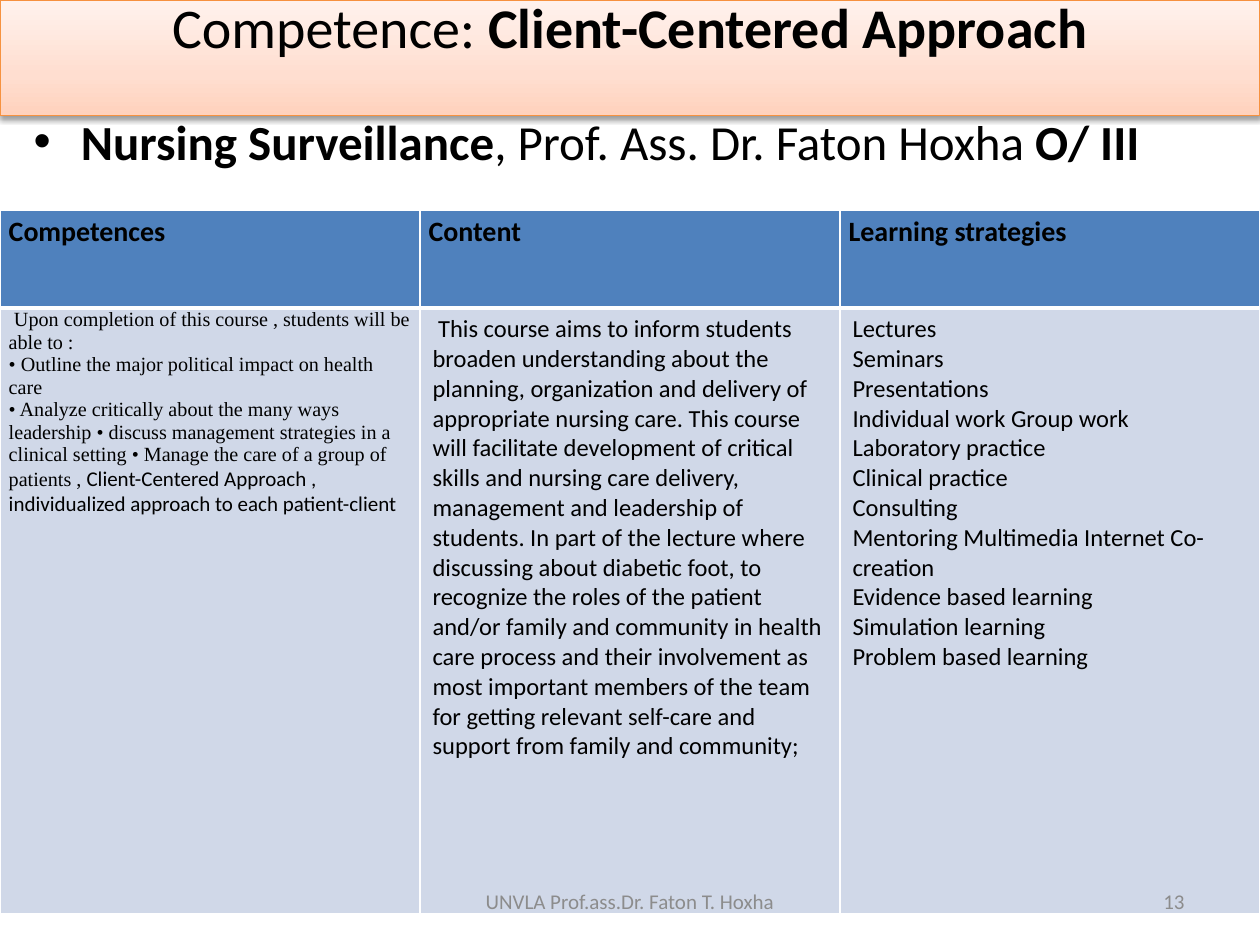
from dataclasses import dataclass

from lxml import etree
from pptx import Presentation
from pptx.dml.color import RGBColor
from pptx.enum.text import MSO_ANCHOR, MSO_AUTO_SIZE, PP_ALIGN
from pptx.oxml import parse_xml
from pptx.oxml.ns import nsdecls, qn
from pptx.util import Pt

LEFT, CENTER, RIGHT = PP_ALIGN.LEFT, PP_ALIGN.CENTER, PP_ALIGN.RIGHT
TOP, MIDDLE = MSO_ANCHOR.TOP, MSO_ANCHOR.MIDDLE
NO_AUTOFIT = MSO_AUTO_SIZE.NONE


@dataclass(frozen=True)
class Theme:
    sans: str = "Calibri"
    serif: str = "Times New Roman"
    ink: str = "000000"
    muted: str = "8C8C8C"
    header: str = "4F81BD"
    cell: str = "D0D8E8"
    grid: str = "FFFFFF"
    title_line: str = "F69240"
    title_stops: tuple = ((0, "FFD2BD"), (35, "FFDED0"), (100, "FFF2ED"))
    title_size: float = 32
    body_size: float = 28
    header_size: float = 16
    cell_size: float = 14
    note_size: float = 12
    serif_size: float = 11.5


THEME = Theme()


@dataclass(frozen=True)
class Span:
    text: str
    size: float
    bold: bool = False
    font: str = THEME.sans
    color: str = THEME.ink


@dataclass(frozen=True)
class Box:
    left: float
    top: float
    width: float
    height: float


@dataclass(frozen=True)
class CellStyle:
    fill: str
    bottom_line: float
    margins: tuple = (7.2, 3.6, 7.2, 3.6)
    line_spacing: float = 1.0


def write(frame, paragraphs: list, align=None, line_spacing=None) -> None:
    """Fill a text frame with paragraphs, each a list of spans."""
    for index, spans in enumerate(paragraphs):
        para = frame.paragraphs[0] if index == 0 else frame.add_paragraph()
        if align is not None:
            para.alignment = align
        if line_spacing is not None:
            para.line_spacing = line_spacing
        for span in spans:
            run = para.add_run()
            run.text = span.text
            run.font.size = Pt(span.size)
            run.font.bold = span.bold
            run.font.name = span.font
            run.font.color.rgb = RGBColor.from_string(span.color)


def place(shape, box: Box) -> None:
    shape.left, shape.top = Pt(box.left), Pt(box.top)
    shape.width, shape.height = Pt(box.width), Pt(box.height)


def style_banner(shape) -> None:
    """Give the title its outline, upward gradient and soft shadow."""
    shape.line.color.rgb = RGBColor.from_string(THEME.title_line)
    shape.line.width = Pt(0.75)
    stops = "".join(
        f'<a:gs pos="{position * 1000}"><a:srgbClr val="{color}"/></a:gs>'
        for position, color in THEME.title_stops)
    gradient = parse_xml(
        f'<a:gradFill {nsdecls("a")} rotWithShape="1"><a:gsLst>{stops}</a:gsLst>'
        '<a:lin ang="16200000" scaled="0"/></a:gradFill>')
    shadow = parse_xml(
        f'<a:effectLst {nsdecls("a")}><a:outerShdw blurRad="{Pt(3.1)}" '
        f'dist="{Pt(1.6)}" dir="5400000" rotWithShape="0"><a:srgbClr val="000000">'
        '<a:alpha val="38000"/></a:srgbClr></a:outerShdw></a:effectLst>')
    outline = shape.line._get_or_add_ln()
    outline.addprevious(gradient)
    outline.addnext(shadow)


def add_border(cell, side: str, width: float) -> None:
    properties = cell._tc.get_or_add_tcPr()
    line = etree.SubElement(properties, qn(f"a:ln{side}"), w=str(Pt(width)))
    fill = etree.SubElement(line, qn("a:solidFill"))
    etree.SubElement(fill, qn("a:srgbClr"), val=THEME.grid)


def fill_cell(cell, paragraphs: list, style: CellStyle) -> None:
    for side, width in (("L", 1), ("R", 1), ("T", 1), ("B", style.bottom_line)):
        add_border(cell, side, width)
    cell.fill.solid()
    cell.fill.fore_color.rgb = RGBColor.from_string(style.fill)
    (cell.margin_left, cell.margin_top,
     cell.margin_right, cell.margin_bottom) = map(Pt, style.margins)
    cell.vertical_anchor = TOP
    write(cell.text_frame, paragraphs, LEFT, style.line_spacing)


def add_note(page, box: Box, text: str, align) -> None:
    note = page.shapes.add_textbox(0, 0, 0, 0)
    place(note, box)
    frame = note.text_frame
    frame.word_wrap = True
    frame.vertical_anchor = MIDDLE
    write(frame, [[Span(text, THEME.note_size, color=THEME.muted)]], align)


HEADERS = ("Competences", "Content", "Learning strategies")
OUTCOMES = (
    "• Outline the major political impact on health care",
    "• Analyze critically about the many ways leadership • discuss management "
    "strategies in a clinical setting • Manage the care of a group of patients , ",
)
CONTENT = (
    " This course aims to inform students broaden understanding about the planning, "
    "organization and delivery of appropriate nursing care. This course will "
    "facilitate development of critical skills and nursing care delivery, management "
    "and leadership of students. In part of the lecture where discussing about "
    "diabetic foot, to recognize the roles of the patient and/or family and community "
    "in health care process and their involvement as most important members of the "
    "team for getting relevant self-care and support from family and community;")
STRATEGIES = (
    "Lectures", "Seminars", "Presentations", "Individual work Group work",
    "Laboratory practice", "Clinical practice", "Consulting",
    "Mentoring Multimedia Internet Co-creation", "Evidence based learning",
    "Simulation learning", "Problem based learning",
)


def add_course_table(page) -> None:
    box = Box(0, 120, 720, 402)
    table = page.shapes.add_table(2, 3, Pt(box.left), Pt(box.top),
                                  Pt(box.width), Pt(box.height)).table
    for column in table.columns:
        column.width = Pt(box.width / 3)
    for row, height in zip(table.rows, (56, 346)):
        row.height = Pt(height)

    tight = (5, 0, 5, 0)
    header_style = CellStyle(THEME.header, 3, tight, 1.15)
    for index, text in enumerate(HEADERS):
        fill_cell(table.cell(0, index),
                  [[Span(text, THEME.header_size, True)]], header_style)

    # Competences mix a serif list with a sans closing phrase
    intro = [Span(" ", THEME.note_size, font=THEME.serif),
             Span("Upon completion of this course , students will be able to :",
                  THEME.serif_size, font=THEME.serif)]
    outcomes = [[Span(text, THEME.serif_size, font=THEME.serif)] for text in OUTCOMES]
    outcomes[-1].append(Span("Client-Centered Approach , individualized approach to "
                             "each patient-client", THEME.note_size))
    fill_cell(table.cell(1, 0), [intro, *outcomes], CellStyle(THEME.cell, 1, tight))

    open_style = CellStyle(THEME.cell, 1)
    for index, lines in ((1, [CONTENT]), (2, STRATEGIES)):
        fill_cell(table.cell(1, index),
                  [[Span(line, THEME.cell_size)] for line in lines], open_style)


def main() -> None:
    deck = Presentation()
    deck.slide_width, deck.slide_height = Pt(720), Pt(540)
    page = deck.slides.add_slide(deck.slide_layouts[1])

    # Title banner, with the text raised by a deep bottom margin
    title = page.shapes.title
    place(title, Box(0, 0, 720, 66))
    style_banner(title)
    frame = title.text_frame
    frame.auto_size = NO_AUTOFIT
    frame.vertical_anchor = MIDDLE
    frame.margin_top, frame.margin_bottom = Pt(0), Pt(36)
    write(frame, [[Span("Competence: ", THEME.title_size),
                   Span("Client-Centered Approach", THEME.title_size, True)]], CENTER)

    # Course line
    body = page.placeholders[1]
    place(body, Box(12, 60, 708, 480))
    body.text_frame.auto_size = NO_AUTOFIT
    write(body.text_frame, [[
        Span("Nursing Surveillance", THEME.body_size, True),
        Span(", Prof. Ass. Dr. Faton Hoxha ", THEME.body_size),
        Span("O/ III", THEME.body_size, True)]])

    add_course_table(page)

    # Page number and footer
    add_note(page, Box(516, 500.5, 168, 28.75), "13", RIGHT)
    add_note(page, Box(246, 500.5, 228, 28.75), "UNVLA Prof.ass.Dr. Faton T. Hoxha", CENTER)
    deck.save("out.pptx")


if __name__ == "__main__":
    main()
